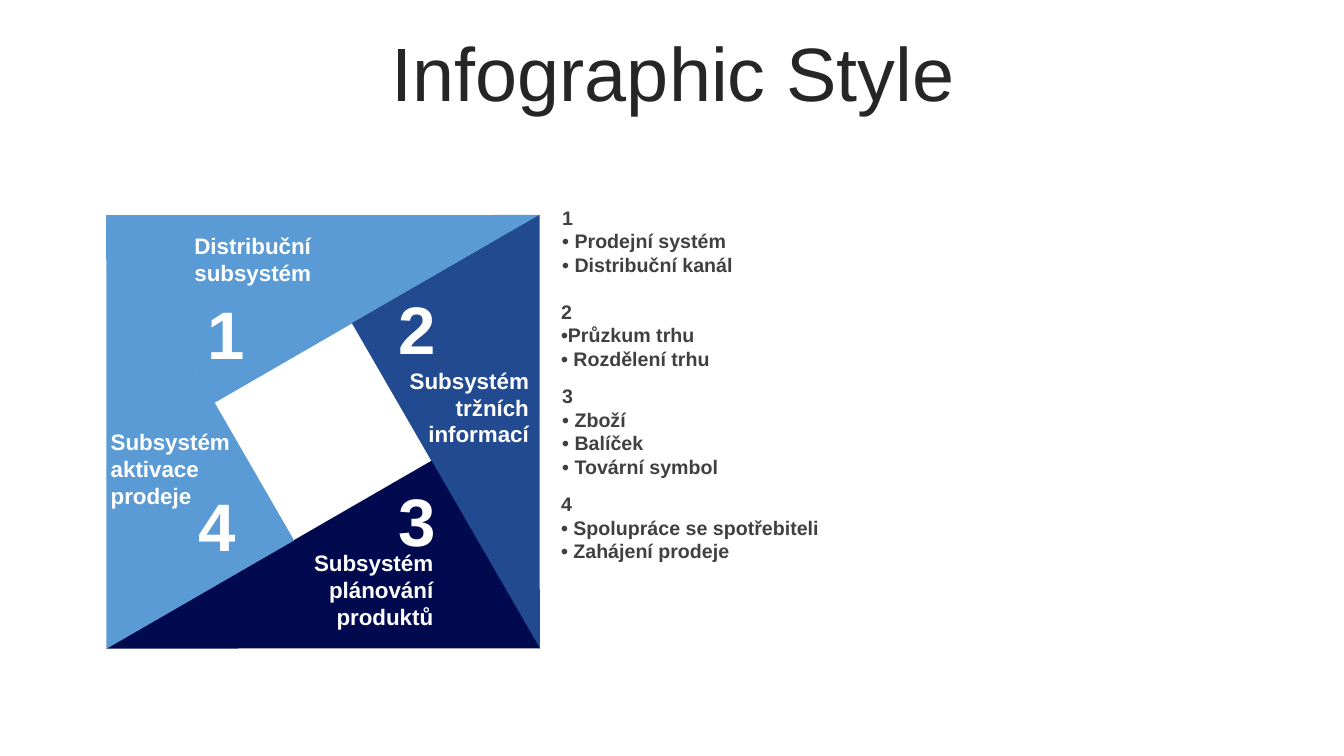
from pptx import Presentation
from pptx.dml.color import RGBColor
from pptx.enum.shapes import MSO_SHAPE
from pptx.enum.text import MSO_ANCHOR, MSO_AUTO_SIZE, PP_ALIGN
from pptx.util import Cm, Pt

WHITE, TITLE, BODY = "FFFFFF", "262626", "404040"
SKY, BLUE, NAVY = "5A9BD5", "224A90", "010A4F"
LEFT, CENTER, RIGHT = PP_ALIGN.LEFT, PP_ALIGN.CENTER, PP_ALIGN.RIGHT

# Pinwheel: four triangles, each a quarter turn around the centre
CENTER_X, CENTER_Y = 8.14, 10.88
TRIANGLE_WIDTH, TRIANGLE_HEIGHT = 9.47, 5.46
NUMBER_WIDTH, NUMBER_HEIGHT = 2.01, 2.31
LIST_WIDTH, LINE_HEIGHT, LIST_PADDING = 15.8, 0.59, 0.28

# colour, direction from the centre
TRIANGLES = [(SKY, (0, -1)), (BLUE, (1, 0)), (NAVY, (0, 1)), (SKY, (-1, 0))]

# number, left, top
NUMBERS = [("1", 4.7, 7.24), ("4", 4.47, 12.07), ("3", 9.5, 11.94), ("2", 9.5, 7.09)]

# text, left, top, width, height, alignment
LABELS = [
    ("Distribuční subsystém", 4.65, 5.72, 5.72, 1.63, LEFT),
    ("Subsystém aktivace prodeje", 2.54, 10.67, 4.62, 2.31, LEFT),
    ("Subsystém plánování produktů", 5.66, 13.72, 5.51, 2.31, RIGHT),
    ("Subsystém tržních informací", 9.19, 9.12, 4.39, 2.31, RIGHT),
]

# lines, left, top
LISTS = [
    (["1", "• Prodejní systém", "• Distribuční kanál"], 13.92, 5.05),
    (["2", "•Průzkum trhu", "• Rozdělení trhu"], 13.89, 7.42),
    (["3", "• Zboží", "• Balíček", "• Tovární symbol"], 13.92, 9.55),
    (["4", "• Spolupráce se spotřebiteli", "• Zahájení prodeje"], 13.89, 12.27),
]


def color(code):
    return RGBColor.from_string(code)


class SlideBuilder:
    font = "Arial"

    def __init__(self, page):
        self.page = page

    def triangle(self, left, top, rotation, fill):
        shape = self.page.shapes.add_shape(
            MSO_SHAPE.RIGHT_TRIANGLE, Cm(left), Cm(top), Cm(TRIANGLE_WIDTH), Cm(TRIANGLE_HEIGHT))
        shape.rotation = rotation
        shape.shadow.inherit = False
        shape.fill.solid()
        shape.fill.fore_color.rgb = color(fill)
        shape.line.fill.background()

    def text(self, lines, left, top, width, height, size, ink,
             align=LEFT, anchor=MSO_ANCHOR.MIDDLE, bold=True, grow=True):
        box = self.page.shapes.add_textbox(Cm(left), Cm(top), Cm(width), Cm(height))
        frame = box.text_frame
        frame.text = "\n".join(lines)
        frame.word_wrap = True
        frame.vertical_anchor = anchor
        frame.auto_size = MSO_AUTO_SIZE.SHAPE_TO_FIT_TEXT if grow else MSO_AUTO_SIZE.NONE
        for para in frame.paragraphs:
            para.alignment = align
            for span in para.runs:
                span.font.name = self.font
                span.font.size = Pt(size)
                span.font.bold = bold
                span.font.color.rgb = color(ink)
        return box

    def title(self, wording):
        box = self.text([wording], 0.89, 0.94, 32.16, 2.01, 54, TITLE,
                        CENTER, bold=False, grow=False)
        para = box.text_frame.paragraphs[0]
        para.line_spacing = 0.9
        para.space_before = Pt(10)


def main():
    deck = Presentation()
    deck.slide_width, deck.slide_height = Cm(33.87), Cm(19.05)
    builder = SlideBuilder(deck.slides.add_slide(deck.slide_layouts[6]))

    for index, (fill, (step_x, step_y)) in enumerate(TRIANGLES):
        builder.triangle(CENTER_X + step_x * TRIANGLE_HEIGHT - TRIANGLE_WIDTH / 2,
                         CENTER_Y + step_y * TRIANGLE_HEIGHT - TRIANGLE_HEIGHT / 2,
                         (330 + 90 * index) % 360, fill)

    builder.title("Infographic Style")
    for number, left, top in NUMBERS:
        builder.text([number], left, top, NUMBER_WIDTH, NUMBER_HEIGHT, 48, WHITE, CENTER)
    for wording, left, top, width, height, align in LABELS:
        builder.text([wording], left, top, width, height, 16, WHITE, align, MSO_ANCHOR.TOP)
    for lines, left, top in LISTS:
        height = LIST_PADDING + LINE_HEIGHT * len(lines)
        builder.text(lines, left, top, LIST_WIDTH, height, 14, BODY)

    deck.save("out.pptx")


if __name__ == "__main__":
    main()
